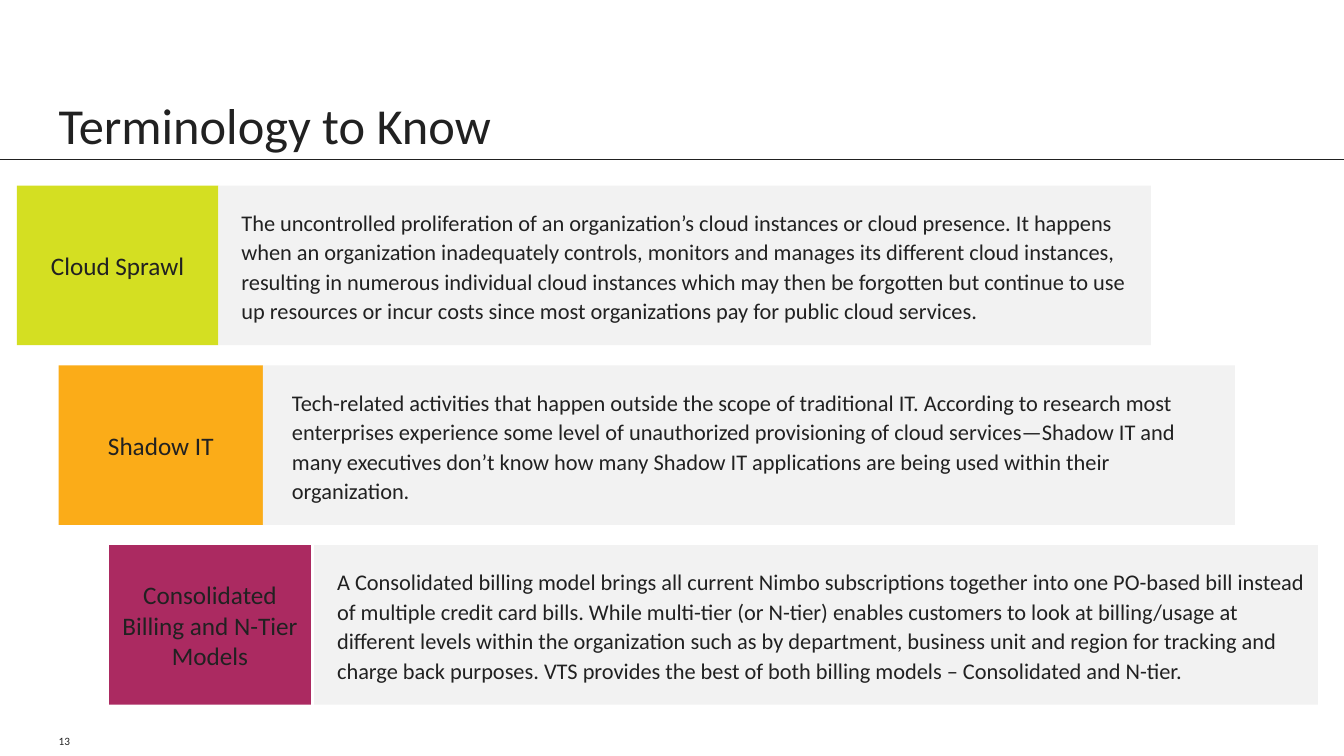
from lxml import etree
from pptx import Presentation
from pptx import util as u
from pptx.dml.color import RGBColor
from pptx.enum import shapes, text
from pptx.oxml.ns import qn

COLUMNS, ROWS = 160, 90
INK, PANEL = "212121", "F2F2F2"
LEFT_MARGIN = 7
FIRST_ROW, ROW_STEP, BAND_ROWS = 22.1, 21.4, 19

TERMS = [
    ("Cloud Sprawl", "D4DF22", (2, 24), (26, 111), 0.13,
     "The uncontrolled proliferation of an organization’s cloud instances or cloud presence. "
     "It happens when an organization inadequately controls, monitors and manages its different "
     "cloud instances, resulting in numerous individual cloud instances which may then be "
     "forgotten but continue to use up resources or incur costs since most organizations pay "
     "for public cloud services."),
    ("Shadow IT", "FBAC18", (7, 24.3), (31.3, 115.7), 0.19,
     "Tech-related activities that happen outside the scope of traditional IT. According to "
     "research most enterprises experience some level of unauthorized provisioning of cloud "
     "services—Shadow IT and many executives don’t know how many Shadow IT applications are "
     "being used within their organization."),
    ("Consolidated Billing and N-Tier Models", "AB2A61", (13, 24), (37.4, 119.5), 0.13,
     "A Consolidated billing model brings all current Nimbo subscriptions together into one "
     "PO-based bill instead of multiple credit card bills. While multi-tier (or N-tier) enables "
     "customers to look at billing/usage at different levels within the organization such as by "
     "department, business unit and region for tracking and charge back purposes. VTS provides "
     "the best of both billing models – Consolidated and N-tier."),
]


def colour(value):
    return RGBColor.from_string(value)


class Slide:
    font = "Calibri"

    def __init__(self, deck):
        self.page = deck.slides.add_slide(deck.slide_layouts[6])
        self.column = deck.slide_width / COLUMNS
        self.row = deck.slide_height / ROWS

    def place(self, left, top, width, height):
        return (round(left * self.column), round(top * self.row),
                round(width * self.column), round(height * self.row))

    def add_words(self, box, words, size, align=text.PP_ALIGN.LEFT,
                  anchor=text.MSO_ANCHOR.MIDDLE, indent=0, spacing=1.0):
        frame = box.text_frame
        frame.word_wrap = True
        frame.vertical_anchor = anchor
        para = frame.paragraphs[0]
        para.alignment = align
        para.line_spacing = spacing
        if indent:
            para._p.get_or_add_pPr().set("marL", str(u.Inches(indent)))
        span = para.add_run()
        span.text = words
        span.font.name = self.font
        span.font.size = u.Pt(size)
        span.font.color.rgb = colour(INK)

    def label(self, area, words, size, **style):
        box = self.page.shapes.add_textbox(*self.place(*area))
        box.text_frame.margin_left = 0
        self.add_words(box, words, size, **style)

    def block(self, area, fill, words, size, **style):
        box = self.page.shapes.add_shape(shapes.MSO_SHAPE.RECTANGLE, *self.place(*area))
        box.shadow.inherit = False
        box.fill.solid()
        box.fill.fore_color.rgb = colour(fill)
        box.line.fill.background()
        self.add_words(box, words, size, **style)

    def rule(self, row):
        left, top, width, _ = self.place(0, row, COLUMNS, 0)
        line = self.page.shapes.add_connector(
            shapes.MSO_CONNECTOR.STRAIGHT, left, top, left + width, top)
        line.line.color.rgb = colour(INK)
        line.line.width = u.Pt(0.5)
        etree.SubElement(line._element.spPr, qn("a:effectLst"))


def main():
    deck = Presentation()
    deck.slide_width, deck.slide_height = u.Inches(13.33), u.Inches(7.5)
    slide = Slide(deck)
    slide.label((LEFT_MARGIN, 86.8, 11, 2.9), "13", 8)
    slide.rule(19)
    slide.label((LEFT_MARGIN, 8.6, 146, 10.4), "Terminology to Know", 36,
                anchor=text.MSO_ANCHOR.BOTTOM)
    for index, (term, fill, term_span, meaning_span, indent, meaning) in enumerate(TERMS):
        top = FIRST_ROW + index * ROW_STEP
        slide.block((term_span[0], top, term_span[1], BAND_ROWS), fill, term, 18,
                    align=text.PP_ALIGN.CENTER)
        slide.block((meaning_span[0], top, meaning_span[1], BAND_ROWS), PANEL, meaning, 16,
                    indent=indent, spacing=1.1)
    deck.save("out.pptx")


if __name__ == "__main__":
    main()
